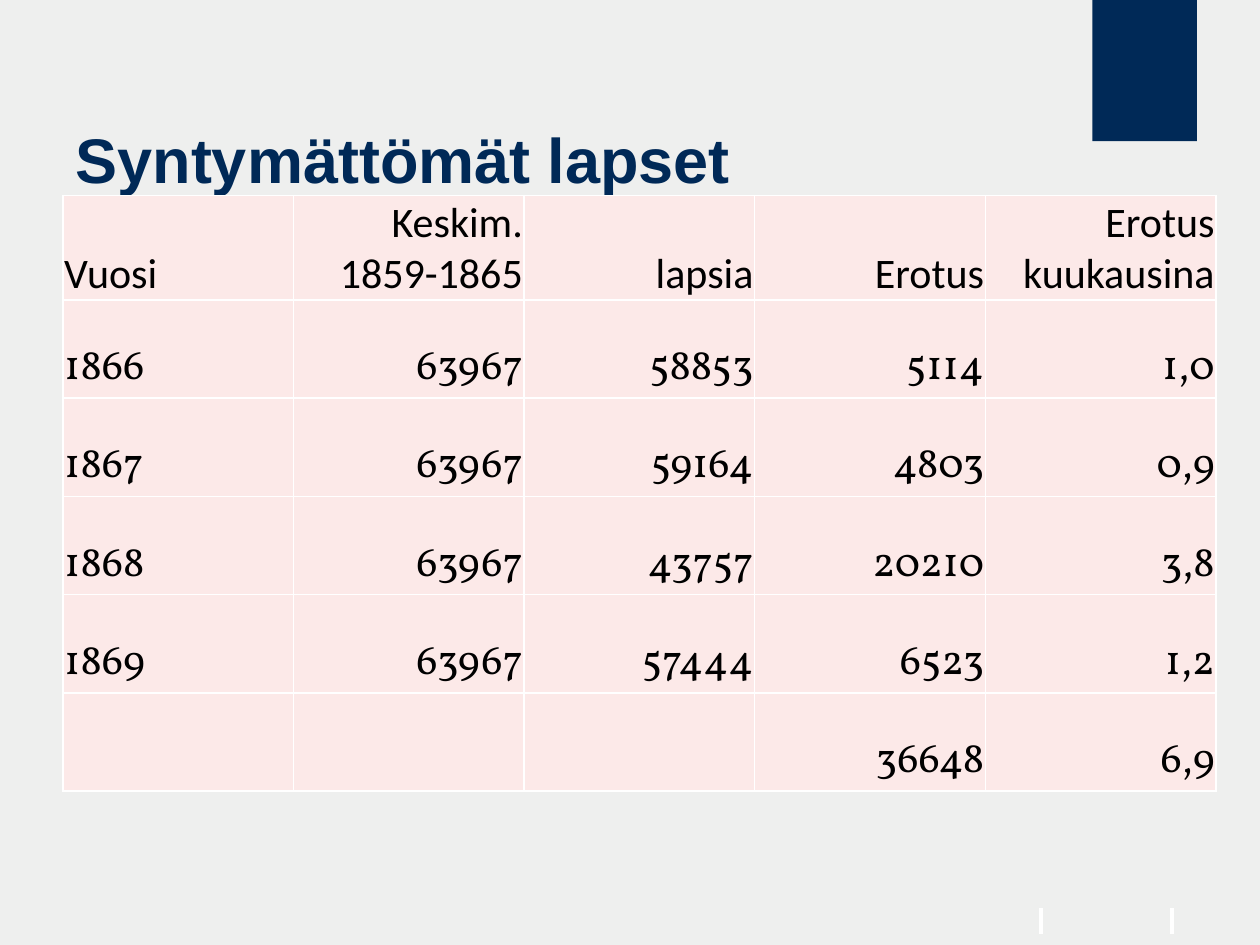
"""Build the slide on children left unborn in 1866-1869."""
from lxml.etree import SubElement
from pptx import Presentation
from pptx.dml.color import RGBColor
from pptx.enum.shapes import MSO_CONNECTOR, MSO_SHAPE
from pptx.enum.text import MSO_ANCHOR, PP_ALIGN
from pptx.oxml.ns import qn
from pptx.util import Inches, Pt

COLORS = {
    "background": "EEEFEE",
    "navy": "002957",
    "cell": "FCE9E8",
    "rule": "FFFFFF",
    "text": "000000",
}
BIRTHS = [
    ["Vuosi", "Keskim. 1859-1865", "lapsia", "Erotus", "Erotus kuukausina"],
    ["1866", "63967", "58853", "5114", "1,0"],
    ["1867", "63967", "59164", "4803", "0,9"],
    ["1868", "63967", "43757", "20210", "3,8"],
    ["1869", "63967", "57444", "6523", "1,2"],
    ["", "", "", "36648", "6,9"],
]


def color(name):
    return RGBColor.from_string(COLORS[name])


def write(frame, text, font="Calibri", size=24, fill="text", bold=False,
          align=PP_ALIGN.LEFT, anchor=MSO_ANCHOR.BOTTOM):
    frame.word_wrap = True
    frame.vertical_anchor = anchor
    paragraph = frame.paragraphs[0]
    paragraph.alignment = align
    run = paragraph.add_run()
    run.text = text
    run.font.name = font
    run.font.size = Pt(size)
    run.font.bold = bold
    run.font.color.rgb = color(fill)


class SlideBuilder:
    def __init__(self, slide):
        self.slide = slide
        background = slide.background.fill
        background.solid()
        background.fore_color.rgb = color("background")

    def tick(self, x, top, bottom):
        tick = self.slide.shapes.add_connector(
            MSO_CONNECTOR.STRAIGHT, Inches(x), Inches(top), Inches(x), Inches(bottom))
        tick.line.color.rgb = color("rule")
        tick.line.width = Pt(2)
        SubElement(tick._element.spPr, qn("a:effectLst"))

    def block(self, left, top, width, height):
        block = self.slide.shapes.add_shape(
            MSO_SHAPE.RECTANGLE, Inches(left), Inches(top), Inches(width), Inches(height))
        block.shadow.inherit = False
        block.fill.solid()
        block.fill.fore_color.rgb = color("navy")
        block.line.fill.background()

    def title(self, text, left, top, width, height):
        title = self.slide.shapes.title
        title.left, title.top = Inches(left), Inches(top)
        title.width, title.height = Inches(width), Inches(height)
        write(title.text_frame, text, font="Arial", size=36, fill="navy",
              bold=True, anchor=MSO_ANCHOR.MIDDLE)

    def table(self, rows, left, top, column_width, header_height, row_height):
        columns = len(rows[0])
        height = header_height + row_height * (len(rows) - 1)
        table = self.slide.shapes.add_table(
            len(rows), columns, Inches(left), Inches(top),
            Inches(column_width * columns), Inches(height)).table
        for column in table.columns:
            column.width = Inches(column_width)
        for r, values in enumerate(rows):
            table.rows[r].height = Inches(row_height if r else header_height)
            for c, value in enumerate(values):
                self.cell(table.cell(r, c), value,
                          font="Vollkorn" if r else "Calibri",
                          align=PP_ALIGN.RIGHT if c else PP_ALIGN.LEFT)

    def cell(self, cell, value, **text_format):
        cell.margin_left = cell.margin_right = cell.margin_top = Inches(0.01)
        cell.margin_bottom = 0
        cell.vertical_anchor = MSO_ANCHOR.BOTTOM
        for side in ("a:lnL", "a:lnR", "a:lnT", "a:lnB"):
            border = SubElement(cell._tc.get_or_add_tcPr(), qn(side), w=str(Pt(1)))
            solid = SubElement(border, qn("a:solidFill"))
            SubElement(solid, qn("a:srgbClr"), val=COLORS["rule"])
        cell.fill.solid()
        cell.fill.fore_color.rgb = color("cell")
        if value:
            write(cell.text_frame, value, **text_format)


def main():
    presentation = Presentation()
    presentation.slide_width, presentation.slide_height = Inches(10), Inches(7.5)
    title_only = presentation.slide_layouts[5]
    builder = SlideBuilder(presentation.slides.add_slide(title_only))
    for x in (9.3, 8.26):
        builder.tick(x, 7.21, 7.41)
    builder.block(8.67, 0, 0.83, 1.12)
    builder.title("Syntymättömät lapset", 0.5, 0.7, 8.04, 1.12)
    builder.table(BIRTHS, 0.5, 1.55, column_width=1.83,
                  header_height=0.83, row_height=0.78)
    presentation.save("out.pptx")


if __name__ == "__main__":
    main()
